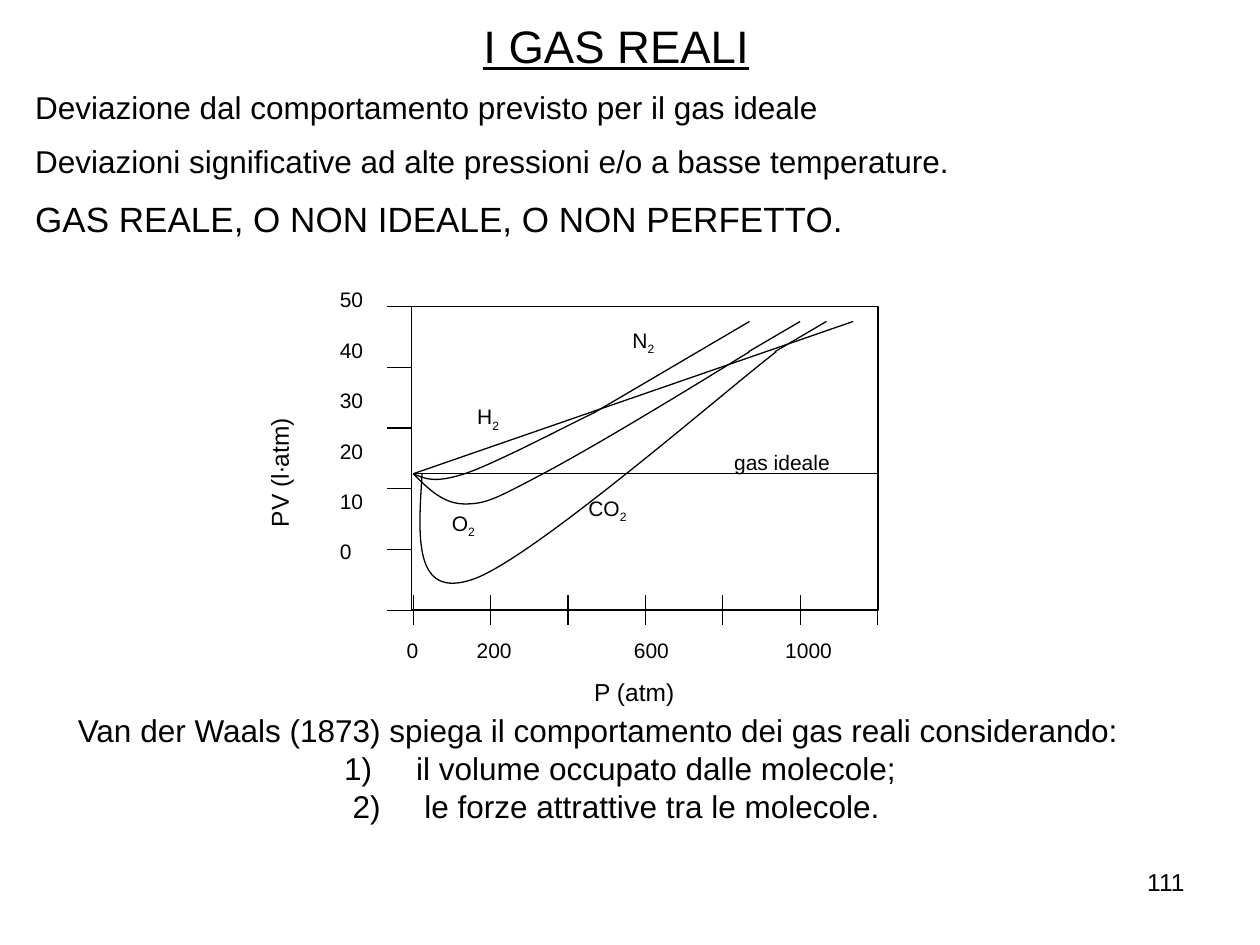
from dataclasses import dataclass

from lxml.etree import SubElement
from pptx import Presentation
from pptx.dml.color import RGBColor
from pptx.enum.shapes import MSO_CONNECTOR as CONN, MSO_SHAPE as SHAPE
from pptx.enum.text import PP_ALIGN as AL
from pptx.oxml.ns import qn
from pptx.util import Cm, Pt

COLORS = {"ink": "000000"}
FONT = "Arial"
LINE_WIDTH = Pt(0.75)
LEFT, TOP, WIDTH, HEIGHT = 8.3, 6.18, 9.4, 6.12
ORIGIN = (8.33, 9.55)
X_STEP, Y_STEP = 1.56, HEIGHT / 5
HANGING = 1.45


@dataclass(frozen=True)
class Para:
    text: str
    size: float
    align: AL = AL.LEFT
    before: float = 0
    sub: str = ""
    underline: bool = False
    tabs: tuple[float, ...] = ()
    margin: float = 0


@dataclass(frozen=True)
class Curve:
    points: tuple[tuple[float, float], ...]
    tail: tuple[tuple[float, float], tuple[float, float]]


@dataclass(frozen=True)
class Label:
    text: str
    box: tuple[float, float, float, float]
    sub: str = ""
    size: float = 12
    rotation: float = 0


CURVES = [
    Curve(((8.51, 9.55), (8.43, 10.82), (8.33, 12.09), (9.53, 11.68),
           (10.72, 11.28), (14.63, 7.87), (15.65, 7.09)),
          ((15.62, 7.09), (16.66, 6.48))),
    Curve((ORIGIN, (8.64, 9.86), (8.94, 10.16), (9.37, 10.16),
           (9.8, 10.16), (9.98, 10.06), (10.95, 9.55),
           (11.91, 9.04), (13.51, 8.08), (15.11, 7.09)),
          ((15.09, 7.09), (16.13, 6.48))),
    Curve((ORIGIN, (8.56, 9.65), (8.76, 9.75), (9.37, 9.55),
           (9.98, 9.35), (11.53, 8.53), (11.96, 8.33)),
          ((11.96, 8.33), (15.11, 6.48))),
]

LABELS = [
    Label("CO", (11.61, 9.86, 2.59, 0.91), sub="2"),
    Label("O", (8.86, 10.16, 2.11, 0.91), sub="2"),
    Label("H", (9.37, 8.02, 2.11, 1.22), sub="2"),
    Label("N", (12.5, 6.48, 2.11, 1.22), sub="2"),
    Label("gas ideale", (14.55, 8.94, 4.17, 1.24)),
    Label("P (atm)", (11.73, 13.53, 2.57, 0.69), size=14),
    Label("PV (l∙atm)", (3.78, 8.54, 3.76, 0.91), size=14, rotation=270),
]


def add_run(p, text: str, *, size: float, underline: bool = False, base: int = 0) -> None:
    """Append a formatted run to a paragraph."""
    r = p.add_run()
    r.text = text
    r.font.name, r.font.size = FONT, Pt(size)
    r.font.color.rgb = RGBColor.from_string(COLORS["ink"])
    if underline:
        r.font.underline = True
    if base:
        r.font._element.set("baseline", str(base))


def add_text(s, paras: list[Para], *, box: tuple[float, float, float, float],
             rotation: float = 0) -> None:
    """Add a wrapped text box holding the given paragraphs."""
    sp = s.shapes.add_textbox(*map(Cm, box))
    sp.rotation = rotation
    tf = sp.text_frame
    tf.word_wrap = True
    for i, para in enumerate(paras):
        p = tf.add_paragraph() if i else tf.paragraphs[0]
        p.alignment, p.space_before = para.align, Pt(para.before)
        pPr = p._p.get_or_add_pPr()
        if para.margin:
            pPr.set("marL", str(Cm(para.margin)))
            pPr.set("indent", str(-Cm(HANGING)))
            SubElement(pPr, qn("a:buFont"), typeface=FONT)
            SubElement(pPr, qn("a:buAutoNum"), type="arabicParenR")
        if para.tabs:
            tabs = SubElement(pPr, qn("a:tabLst"))
            for pos in para.tabs:
                SubElement(tabs, qn("a:tab"), pos=str(Cm(pos)), algn="l")
        add_run(p, para.text, size=para.size, underline=para.underline)
        if para.sub:
            add_run(p, para.sub, size=para.size, base=-25000)


def style_line(sp) -> None:
    """Give a shape the thin ink outline."""
    sp.line.color.rgb = RGBColor.from_string(COLORS["ink"])
    sp.line.width = LINE_WIDTH


def add_line(s, start: tuple[float, float], end: tuple[float, float]) -> None:
    """Draw a straight line without shadow."""
    c = s.shapes.add_connector(CONN.STRAIGHT, *map(Cm, start + end))
    style_line(c)
    SubElement(c._element.spPr, qn("a:effectLst"))


def style_outline(sp) -> None:
    """Leave a shape as a bare outline."""
    sp.shadow.inherit = False
    sp.fill.background()
    style_line(sp)


def add_curve(s, curve: Curve) -> None:
    """Draw an isotherm of cubic segments and its straight tail."""
    start, *rest = [tuple(map(Cm, pt)) for pt in curve.points]
    builder = s.shapes.build_freeform(*start, scale=1.0)
    builder.add_line_segments(rest, close=False)
    sp = builder.convert_to_shape()
    outline = next(sp._element.iter(qn("a:path")))
    segments = outline.findall(qn("a:lnTo"))
    for i in range(0, len(segments), 3):
        cubic = SubElement(outline, qn("a:cubicBezTo"))
        for segment in segments[i:i + 3]:
            cubic.append(segment[0])
            outline.remove(segment)
    style_outline(sp)
    add_line(s, *curve.tail)


def draw_plot(s) -> None:
    """Draw the frame, ticks, isotherms and labels."""
    style_outline(s.shapes.add_shape(SHAPE.RECTANGLE, *map(Cm, (LEFT, TOP, WIDTH, HEIGHT))))
    for i in range(6):
        y = TOP + i * Y_STEP
        add_line(s, (7.8, y), (LEFT, y))
    for i in range(7):
        x = ORIGIN[0] + i * X_STEP
        add_line(s, (x, 11.99), (x, 12.6))
    add_line(s, ORIGIN, (LEFT + WIDTH, ORIGIN[1]))
    add_line(s, ORIGIN, (17.2, 6.48))
    for curve in CURVES:
        add_curve(s, curve)
    add_text(s, [Para("0\t200\t600\t1000", 12, tabs=(1.41, 4.58, 7.63))],
             box=(7.95, 12.73, 9.88, 0.91))
    add_text(s, [Para(str(v), 12, before=14.4 if v < 50 else 0) for v in range(50, -1, -10)],
             box=(6.6, 5.66, 2.08, 6.73))
    for lb in LABELS:
        add_text(s, [Para(lb.text, lb.size, sub=lb.sub)], box=lb.box, rotation=lb.rotation)


def main() -> None:
    """Build the slide and save it."""
    prs = Presentation()
    prs.slide_width, prs.slide_height = Cm(25.4), Cm(19.05)
    s = prs.slides.add_slide(prs.slide_layouts[6])
    add_text(s, [Para("111", 14, AL.RIGHT)], box=(18.21, 17.35, 5.92, 1.32))
    add_text(s, [
        Para("I GAS REALI", 26, AL.CENTER, underline=True),
        Para("Deviazione dal comportamento previsto per il gas ideale", 18, AL.JUSTIFY, 9),
        Para("Deviazioni significative ad alte pressioni e/o a basse temperature.",
             18, AL.JUSTIFY, 9),
        Para("GAS REALE, O NON IDEALE, O NON PERFETTO.", 20, AL.JUSTIFY, 10),
    ], box=(0.46, 0.24, 23.93, 4.93))
    draw_plot(s.shapes.add_group_shape())
    add_text(s, [
        Para("Van der Waals (1873) spiega il comportamento dei gas reali considerando:",
             18, AL.JUSTIFY),
        Para("il volume occupato dalle molecole;", 18, AL.CENTER, margin=1.61),
        Para("le forze attrattive tra le molecole.", 18, AL.CENTER, margin=HANGING),
    ], box=(1.32, 14.21, 22.2, 2.57))
    prs.save("out.pptx")


if __name__ == "__main__":
    main()
